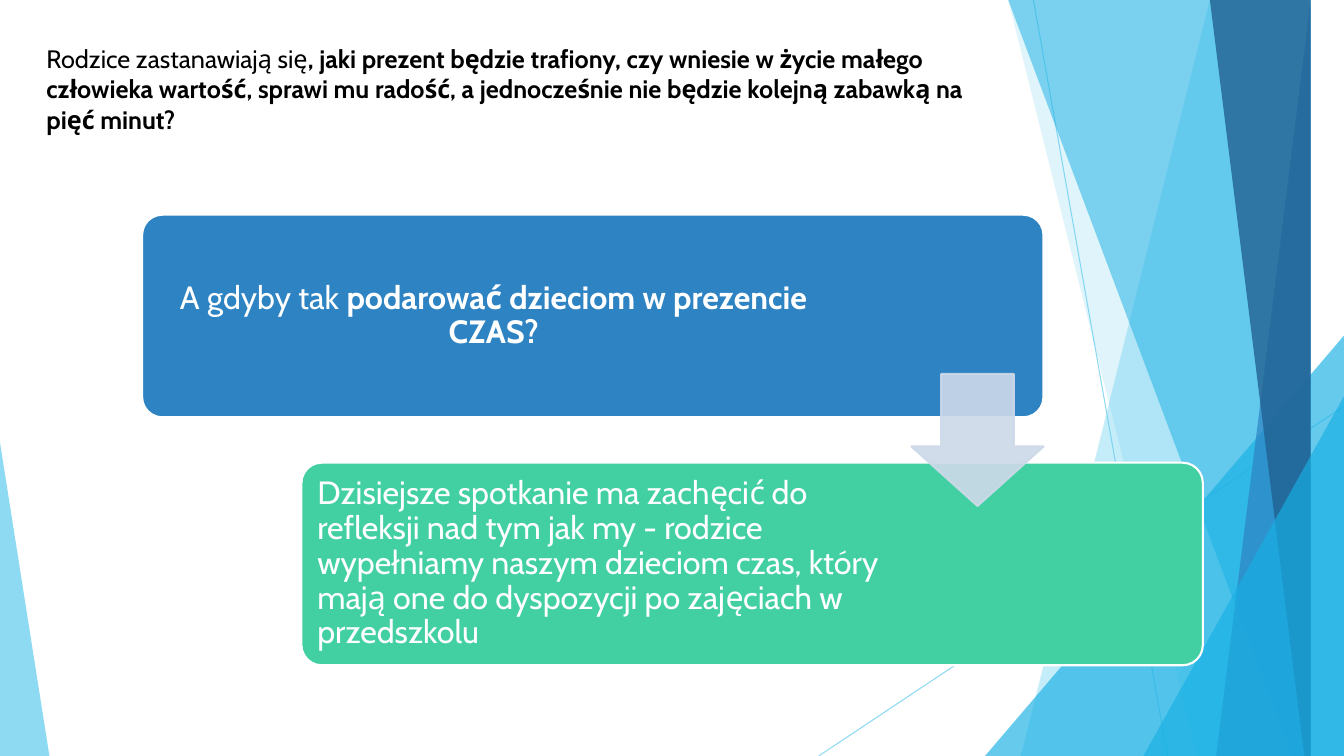
from lxml.etree import SubElement
from pptx import Presentation
from pptx.dml.color import RGBColor
from pptx.enum.shapes import MSO_CONNECTOR, MSO_SHAPE as SHAPE
from pptx.enum.text import MSO_ANCHOR as ANCHOR, MSO_AUTO_SIZE, PP_ALIGN as ALIGN
from pptx.oxml.ns import qn
from pptx.util import Inches, Pt

WIDTH, HEIGHT = 13.33, 7.5
SKY, CYAN, BLUE, NAVY = "5FCBEF", "17B0E4", "2E83C3", "226292"
GREEN, MIST, WHITE, BLACK = "42D0A2", "CDD9E9", "FFFFFF", "000000"


def paint(shape, fill, color, opacity=100):
    """Colour a fill or line fill of the shape; paint the fill before the line."""
    fill.solid()
    fill.fore_color.rgb = RGBColor.from_string(color)
    if opacity < 100:
        newest = list(shape.element.spPr.iter(qn("a:srgbClr")))[-1]
        SubElement(newest, qn("a:alpha")).set("val", str(opacity * 1000))


def write(frame, parts, size, color, align, anchor):
    """Fill the frame with one paragraph of (words, bold) parts."""
    frame.word_wrap = True
    frame.auto_size = MSO_AUTO_SIZE.NONE
    frame.vertical_anchor = anchor
    paragraph = frame.paragraphs[0]
    paragraph.alignment = align
    for words, bold in parts:
        run = paragraph.add_run()
        run.text = words
        run.font.name, run.font.size, run.font.bold = "Cabin", Pt(size), bold
        run.font.color.rgb = RGBColor.from_string(color)
    return paragraph


deck = Presentation()
deck.slide_width, deck.slide_height = Inches(WIDTH), Inches(HEIGHT)
slide = deck.slides.add_slide(deck.slide_layouts[5])
shapes = slide.shapes

# Thin rays behind the facets
for ends in [(10.25, 0, 11.58, HEIGHT), (WIDTH, 4.03, 8.12, HEIGHT)]:
    ray = shapes.add_connector(MSO_CONNECTOR.STRAIGHT, *map(Inches, ends))
    paint(ray, ray.line.fill, SKY, 70)
    ray.line.width = Pt(0.75)
    SubElement(ray.element.spPr, qn("a:effectLst"))

# Translucent facets: a band is (top x, bottom x) up to the right edge,
# a peak is (left, top, width, apex) down to the bottom edge
facets = [
    ("band", (12.28, 10.04), SKY, 36),
    ("band", (10.5, 11.83), SKY, 20),
    ("peak", (9.77, 3.33, 3.56, 1), CYAN, 66),
    ("band", (10.21, 12.91), CYAN, 50),
    ("band", (13.03, 11.92), BLUE, 70),
    ("band", (11.96, 13.18), NAVY, 80),
    ("peak", (11.34, 3.93, 1.99, 1), CYAN, 66),
    ("peak", (0, 4.39, 0.49, 0), SKY, 70),
]
for kind, geometry, color, opacity in facets:
    if kind == "band":
        top_x, bottom_x = geometry
        outline = shapes.build_freeform(top_x, 0, scale=Inches(1))
        outline.add_line_segments([(WIDTH, 0), (WIDTH, HEIGHT), (bottom_x, HEIGHT)])
        facet = outline.convert_to_shape()
    else:
        left, top, width, apex = geometry
        facet = shapes.add_shape(SHAPE.ISOSCELES_TRIANGLE, Inches(left), Inches(top),
                                 Inches(width), Inches(HEIGHT - top))
        facet.adjustments[0] = apex
    facet.shadow.inherit = False
    paint(facet, facet.fill, color, opacity)
    facet.line.fill.background()

# Opening question
question = shapes.title
question.left, question.top = Inches(0.36), Inches(0.38)
question.width, question.height = Inches(9.71), Inches(1.1)
write(question.text_frame, [
    ("Rodzice zastanawiają się", False),
    (", jaki prezent będzie trafiony, czy wniesie w życie małego człowieka wartość, "
     "sprawi mu radość, a jednocześnie nie będzie kolejną zabawką na pięć minut?", True),
], 18, BLACK, ALIGN.LEFT, ANCHOR.TOP)

# Two stepped cards: left, top, right text margin
cards = [
    (1.41, 2.13, 2.06, BLUE, ALIGN.CENTER,
     [("A gdyby tak ", False), ("podarować dzieciom w prezencie CZAS?", True)]),
    (2.99, 4.59, 2.99, GREEN, ALIGN.LEFT,
     [("Dzisiejsze spotkanie ma zachęcić do refleksji nad tym jak my - rodzice "
       "wypełniamy naszym dzieciom czas, który mają one do dyspozycji po zajęciach "
       "w przedszkolu", False)]),
]
for left, top, margin, color, align, parts in cards:
    card = shapes.add_shape(SHAPE.ROUNDED_RECTANGLE, Inches(left), Inches(top),
                            Inches(8.94), Inches(2.01))
    card.adjustments[0] = 0.1
    card.shadow.inherit = False
    paint(card, card.fill, color)
    paint(card, card.line.fill, WHITE)
    card.line.width = Pt(1.5)
    frame = card.text_frame
    frame.margin_left, frame.margin_right = Inches(0.1), Inches(margin)
    write(frame, parts, 23, WHITE, align, ANCHOR.MIDDLE).line_spacing = 0.9

# Arrow from the first card to the second
arrow = shapes.add_shape(SHAPE.DOWN_ARROW, Inches(9.04), Inches(3.71),
                         Inches(1.31), Inches(1.31))
arrow.adjustments[0], arrow.adjustments[1] = 0.55, 0.45
arrow.shadow.inherit = False
paint(arrow, arrow.fill, MIST, 90)
paint(arrow, arrow.line.fill, MIST, 90)
arrow.line.width = Pt(1.5)

deck.save("out.pptx")
